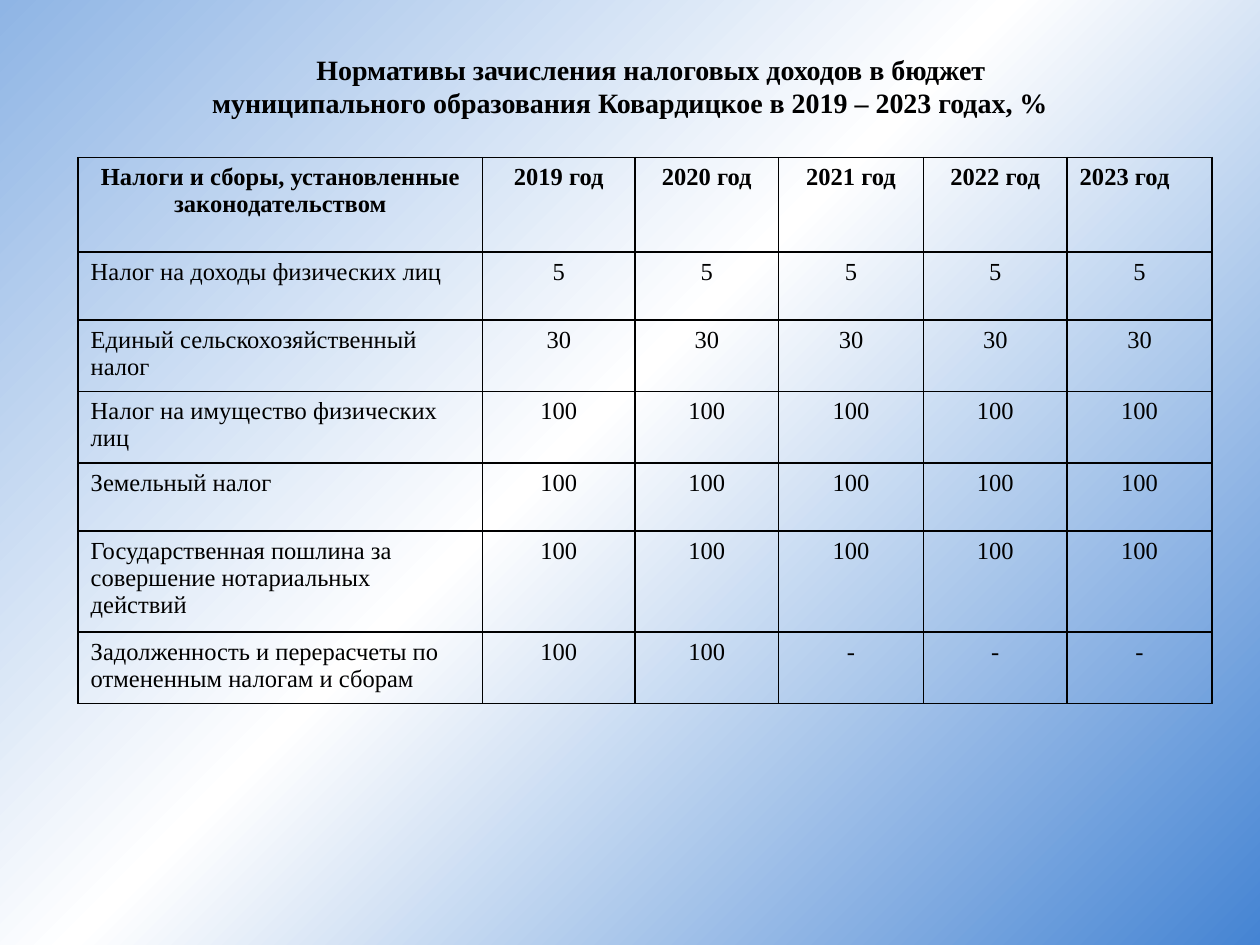
import copy
import pptx
import pptx.util
import pptx.dml.color
import pptx.enum.text
import pptx.oxml
import pptx.oxml.ns

Inches = pptx.util.Inches
Pt = pptx.util.Pt
ALIGN = pptx.enum.text.PP_ALIGN


def rgb(value):
    return pptx.dml.color.RGBColor.from_string(value)


def format_runs(p, size, bold):
    for r in p.runs:
        r.font.name = "Times New Roman"
        r.font.size = Pt(size)
        r.font.bold = bold
        r.font.color.rgb = rgb("000000")


prs = pptx.Presentation()
prs.slide_width = Inches(10)
prs.slide_height = Inches(7.5)
s = prs.slides.add_slide(prs.slide_layouts[6])

fill = s.background.fill
fill.gradient()
fill.gradient_angle = 315
first_stop = fill._fill._gradFill.gsLst[0]
first_stop.addnext(copy.deepcopy(first_stop))
stops = [(0, "8FB5E5"), (0.46, "FFFFFF"), (1, "4584D3")]
for stop, (position, color) in zip(fill.gradient_stops, stops):
    stop.position = position
    stop.color.rgb = rgb(color)

title = s.shapes.add_textbox(Inches(0.5), Inches(0.37), Inches(9), Inches(0.62))
tf = title.text_frame
tf.word_wrap = True
tf.vertical_anchor = pptx.enum.text.MSO_ANCHOR.MIDDLE
p = tf.paragraphs[0]
p.text = (
    "Нормативы зачисления налоговых доходов в бюджет \v"
    "муниципального образования Ковардицкое в 2019 – 2023 годах, %"
)
p.alignment = ALIGN.CENTER
p._p.get_or_add_pPr().set("indent", str(Inches(0.39)))
format_runs(p, 16, True)

rows = [
    ["Налоги и сборы, установленные законодательством"]
    + [f"{year} год" for year in range(2019, 2024)],
    ["Налог на доходы физических лиц"] + ["5"] * 5,
    ["Единый сельскохозяйственный налог"] + ["30"] * 5,
    ["Налог на имущество физических лиц"] + ["100"] * 5,
    ["Земельный налог"] + ["100"] * 5,
    ["Государственная пошлина за совершение нотариальных действий"] + ["100"] * 5,
    ["Задолженность и перерасчеты по отмененным налогам и сборам"]
    + ["100"] * 2 + ["-"] * 3,
]
widths = [3.21, 1.21, 1.14, 1.15, 1.14, 1.15]
heights = [0.75, 0.54, 0.54, 0.54, 0.54, 0.75, 0.54]

table = s.shapes.add_table(
    len(rows), len(widths), Inches(0.62), Inches(1.25), Inches(9), Inches(4.2)
).table
table.first_row = False
table.horz_banding = False
for column, width in zip(table.columns, widths):
    column.width = Inches(width)
for row, height in zip(table.rows, heights):
    row.height = Inches(height)

for i, row in enumerate(rows):
    for j, text in enumerate(row):
        cell = table.cell(i, j)
        cell.text = text
        p = cell.text_frame.paragraphs[0]
        left = (i == 0 and j == 5) or (i > 0 and j == 0)
        p.alignment = ALIGN.LEFT if left else ALIGN.CENTER
        format_runs(p, 14, i == 0)
        tcPr = cell._tc.get_or_add_tcPr()
        for side in ("lnL", "lnR", "lnT", "lnB"):
            tcPr.append(pptx.oxml.parse_xml(
                f'<a:{side} {pptx.oxml.ns.nsdecls("a")} w="{Pt(1)}"><a:solidFill>'
                f'<a:srgbClr val="000000"/></a:solidFill></a:{side}>'
            ))
        cell.fill.background()

prs.save("out.pptx")
